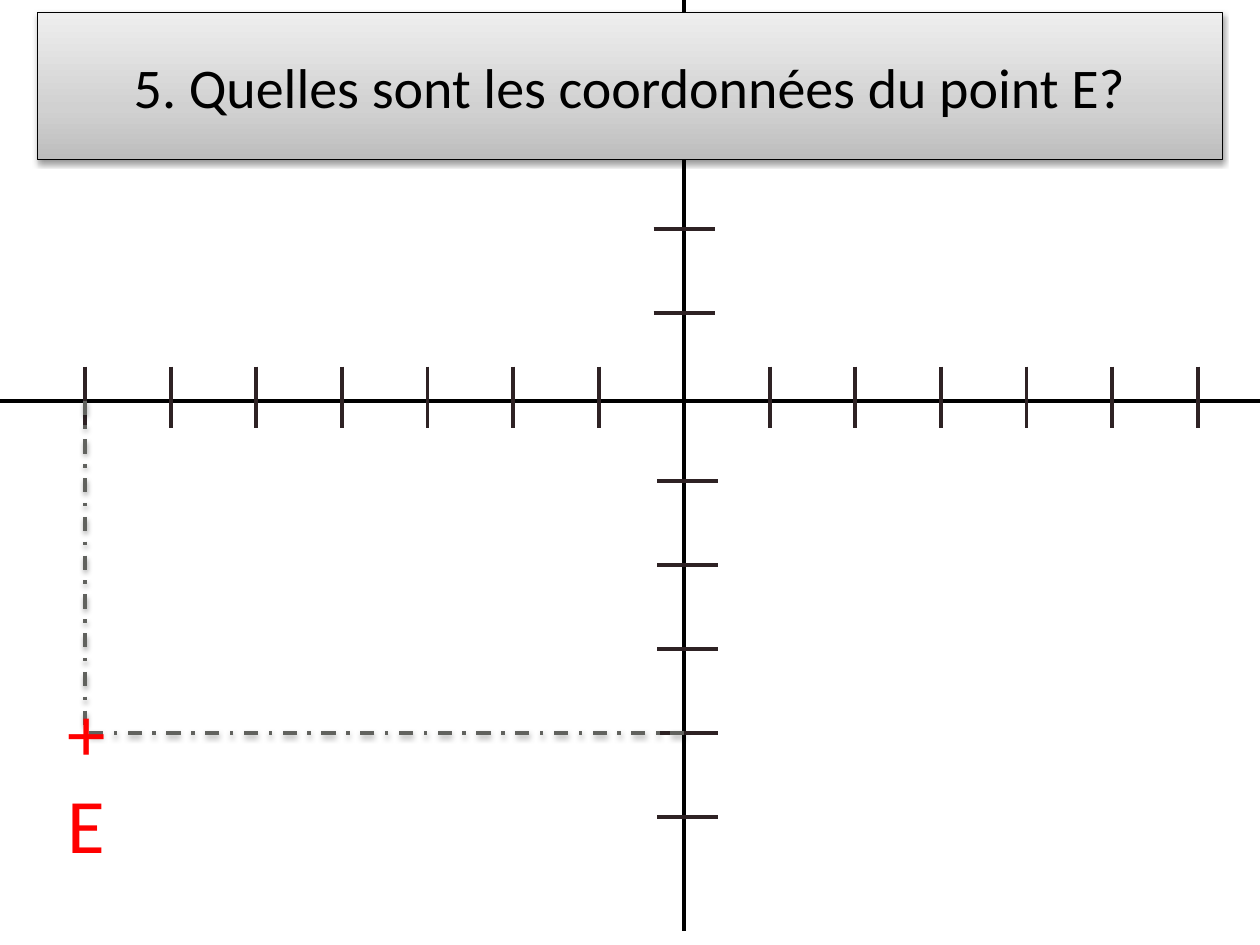
from dataclasses import dataclass

from lxml.etree import SubElement
from pptx import Presentation
from pptx.dml.color import RGBColor
from pptx.enum.dml import MSO_LINE_DASH_STYLE as Dash
from pptx.enum.shapes import MSO_CONNECTOR as Connector
from pptx.enum.text import MSO_ANCHOR as Anchor, MSO_AUTO_SIZE as AutoSize, PP_ALIGN as Align
from pptx.oxml import parse_xml
from pptx.oxml.ns import nsdecls, qn
from pptx.util import Pt


@dataclass(frozen=True)
class Theme:
    font: str = "Calibri"
    ink: str = "000000"
    tick: str = "2E2224"
    guide: str = "61625E"
    mark: str = "FF0000"
    banner: tuple = ((0, "BDBDBD"), (35, "D1D1D1"), (100, "EEEEEE"))
    title_size: float = 32
    mark_size: float = 44
    axis_width: float = 2.25
    guide_width: float = 2
    border_width: float = 0.75


@dataclass(frozen=True)
class Box:
    left: float
    top: float
    width: float
    height: float


@dataclass(frozen=True)
class Grid:
    x: float
    y: float
    step_x: float
    step_y: float

    def at(self, x, y):
        return self.x + x * self.step_x, self.y - y * self.step_y


THEME = Theme()
GRID = Grid(391, 227, 48.9, 48)
POINT_E = (-7, -4)
TICK = 35
AXIS_Y = 229


def place(shape, box):
    shape.left, shape.top = Pt(box.left), Pt(box.top)
    shape.width, shape.height = Pt(box.width), Pt(box.height)


def set_effects(properties, shadow=False):
    effects = SubElement(properties, qn("a:effectLst"))
    if shadow:
        outer = SubElement(effects, qn("a:outerShdw"), blurRad=str(Pt(3.1)),
                           dist=str(Pt(1.6)), dir="5400000", rotWithShape="0")
        black = SubElement(outer, qn("a:srgbClr"), val=THEME.ink)
        SubElement(black, qn("a:alpha"), val="38000")


def draw_line(shapes, start, end, color, width, dash=None, arrow=False, shadow=False):
    line = shapes.add_connector(Connector.STRAIGHT, *map(Pt, (*start, *end)))
    line.line.color.rgb = RGBColor.from_string(color)
    line.line.width = Pt(width)
    if dash:
        line.line.dash_style = dash
    properties = line.element.spPr
    if arrow:
        SubElement(properties.find(qn("a:ln")), qn("a:tailEnd"), type="arrow")
    set_effects(properties, shadow)


def add_run(paragraph, text, size, color):
    run = paragraph.add_run()
    run.text = text
    run.font.name = THEME.font
    run.font.size = Pt(size)
    run.font.color.rgb = RGBColor.from_string(color)


def add_axes(slide, box):
    shapes = slide.shapes.add_group_shape().shapes
    right, bottom = box.left + box.width, box.top + box.height
    for start, end in (((box.left, AXIS_Y), (right, AXIS_Y)),
                       ((GRID.x, bottom), (GRID.x, box.top))):
        draw_line(shapes, start, end, THEME.ink, THEME.axis_width, arrow=True)
    half = TICK / 2
    for unit in range(-7, 7):
        if unit:
            x, y = GRID.at(unit, 0)
            draw_line(shapes, (x, y - half), (x, y + half), THEME.tick, THEME.axis_width)
    for unit in range(-5, 3):
        if unit:
            x, y = GRID.at(0, unit)
            x += 2 if unit < 0 else 0
            draw_line(shapes, (x - half, y), (x + half, y), THEME.tick, THEME.axis_width)


def add_question(slide, box):
    question = slide.shapes.title
    question.element.getparent().append(question.element)
    place(question, box)
    stops = "".join(
        f'<a:gs pos="{position * 1000}"><a:srgbClr val="{color}"/></a:gs>'
        for position, color in THEME.banner)
    properties = question.element.spPr
    properties.append(parse_xml(
        f'<a:gradFill {nsdecls("a")} rotWithShape="1"><a:gsLst>{stops}</a:gsLst>'
        '<a:lin ang="16200000" scaled="0"/></a:gradFill>'))
    question.line.color.rgb = RGBColor.from_string(THEME.ink)
    question.line.width = Pt(THEME.border_width)
    set_effects(properties, shadow=True)
    frame = question.text_frame
    frame.vertical_anchor = Anchor.MIDDLE
    paragraph = frame.paragraphs[0]
    paragraph.alignment = Align.CENTER
    add_run(paragraph, "5. Quelles sont les coordonnées du point E?", THEME.title_size, THEME.ink)


def add_guides(slide):
    x, y = GRID.at(*POINT_E)
    for start in ((x, AXIS_Y), (GRID.x, y)):
        draw_line(slide.shapes, start, (x, y), THEME.guide, THEME.guide_width,
                  dash=Dash.DASH_DOT, shadow=True)


def add_point_label(slide, box):
    label = slide.shapes.add_textbox(*map(Pt, (box.left, box.top, box.width, box.height)))
    frame = label.text_frame
    frame.word_wrap = True
    frame.auto_size = AutoSize.SHAPE_TO_FIT_TEXT
    add_run(frame.paragraphs[0], "+", THEME.mark_size, THEME.mark)
    add_run(frame.add_paragraph(), "E", THEME.mark_size, THEME.mark)


def main():
    deck = Presentation()
    deck.slide_width, deck.slide_height = Pt(720), Pt(540)
    slide = deck.slides.add_slide(deck.slide_layouts[5])
    add_axes(slide, Box(-16.5, -77, 836, 609))
    add_question(slide, Box(21.6, 7.2, 676.8, 84))
    add_guides(slide)
    add_point_label(slide, Box(31.7, 387.4, 109.4, 113.8))
    deck.save("out.pptx")


if __name__ == "__main__":
    main()
